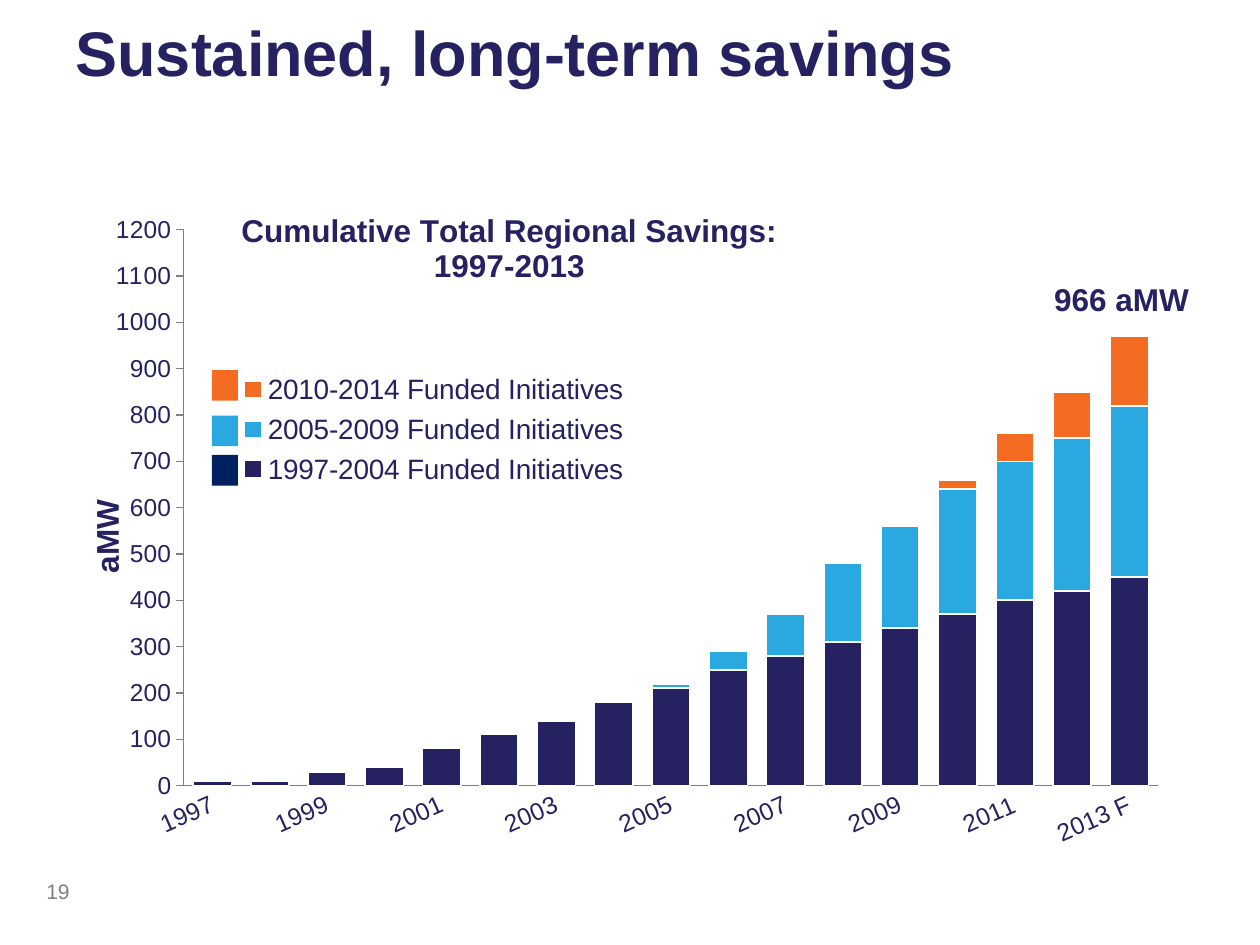
from dataclasses import dataclass

from lxml.etree import SubElement
from pptx import Presentation
from pptx.chart.data import CategoryChartData
from pptx.dml.color import RGBColor
from pptx.enum.chart import XL_CHART_TYPE, XL_LEGEND_POSITION, XL_TICK_MARK
from pptx.enum.shapes import MSO_SHAPE
from pptx.enum.text import MSO_ANCHOR, PP_ALIGN
from pptx.oxml.ns import qn
from pptx.oxml.xmlchemy import OxmlElement
from pptx.util import Pt

NAVY, SKY, ORANGE, DEEP_BLUE = "262262", "2AA9E0", "F36C21", "002060"
GREY, WHITE = "808080", "FFFFFF"


@dataclass
class Box:
    left: float
    top: float
    width: float
    height: float

    def points(self) -> tuple:
        return Pt(self.left), Pt(self.top), Pt(self.width), Pt(self.height)


@dataclass
class Period:
    name: str
    savings: list
    color: str
    key_color: str
    key_top: float


PERIODS = [
    Period("1997-2004 Funded Initiatives",
           [10, 10, 30, 40, 80, 110, 140, 180, 210, 250, 280, 310, 340, 370, 400, 420, 450],
           NAVY, DEEP_BLUE, 260),
    Period("2005-2009 Funded Initiatives",
           [0] * 8 + [10, 40, 90, 170, 220, 270, 300, 330, 370], SKY, SKY, 237.5),
    Period("2010-2014 Funded Initiatives",
           [0] * 13 + [20, 60, 100, 150], ORANGE, ORANGE, 211.5),
]
YEARS = [str(year) for year in range(1997, 2013)] + ["2013 F"]


def rgb(color: str) -> RGBColor:
    return RGBColor.from_string(color)


def set_font(font, size: float, color: str = NAVY, bold: bool = False) -> None:
    for key, value in {"name": "Arial", "size": Pt(size), "bold": bold}.items():
        setattr(font, key, value)
    font.color.rgb = rgb(color)


def add_label(slide, box: Box, text: str, size: float, color: str, bold: bool = False,
              align=PP_ALIGN.LEFT, wrap: bool = True) -> None:
    frame = slide.shapes.add_textbox(*box.points()).text_frame
    frame.word_wrap = wrap
    frame.text = text
    frame.paragraphs[0].alignment = align
    set_font(frame.paragraphs[0].font, size, color, bold)


def place(part, index: int, **settings) -> None:
    """Give a chart part a manual layout, in fractions of the chart."""
    layout = part.find(qn("c:layout"))
    if layout is not None:
        part.remove(layout)
    layout = OxmlElement("c:layout")
    part.insert(index, layout)
    manual = SubElement(layout, qn("c:manualLayout"))
    for tag, value in settings.items():
        SubElement(manual, qn(f"c:{tag}")).set("val", str(value))


def write_title(text_frame, text: str) -> None:
    text_frame.text = text
    for paragraph in text_frame.paragraphs:
        set_font(paragraph.font, 18, bold=True)


def format_axes(chart) -> None:
    years, savings = chart.category_axis, chart.value_axis
    for axis, tick in ((years, XL_TICK_MARK.NONE), (savings, XL_TICK_MARK.OUTSIDE)):
        axis.major_tick_mark = tick
        axis.minor_tick_mark = XL_TICK_MARK.NONE
        axis.has_major_gridlines = False
        axis.format.line.color.rgb = rgb(GREY)
        axis.format.line.width = Pt(0.75)
        set_font(axis.tick_labels.font, 14)
    scale = {"minimum_scale": 0, "maximum_scale": 1200, "major_unit": 100}
    for key, value in scale.items():
        setattr(savings, key, value)
    savings.tick_labels.number_format = "0"
    savings.tick_labels.number_format_is_linked = False
    write_title(savings.axis_title.text_frame, "aMW")

    # Slanted labels, every second year
    cat_axis = chart.element.find(".//" + qn("c:catAx"))
    cat_axis.find(qn("c:txPr")).find(qn("a:bodyPr")).set("rot", "-1440000")
    skip = OxmlElement("c:tickLblSkip")
    skip.set("val", "2")
    cat_axis.find(qn("c:noMultiLvlLbl")).addprevious(skip)


def add_savings_chart(slide, box: Box) -> None:
    data = CategoryChartData(number_format="0")
    data.categories = YEARS
    for period in PERIODS:
        data.add_series(period.name, period.savings)
    chart = slide.shapes.add_chart(XL_CHART_TYPE.COLUMN_STACKED, *box.points(), data).chart
    set_font(chart.font, 18)

    # Stacked columns
    plot = chart.plots[0]
    for key, value in {"gap_width": 50, "overlap": 100, "vary_by_categories": False}.items():
        setattr(plot, key, value)
    for series, period in zip(plot.series, PERIODS):
        series.format.fill.solid()
        series.format.fill.fore_color.rgb = rgb(period.color)
        series.format.line.color.rgb = rgb(WHITE)
        series.format.line.width = Pt(1)
    format_axes(chart)

    # Title and legend over the plot
    chart.has_title = True
    write_title(chart.chart_title.text_frame, "Cumulative Total Regional Savings:\n1997-2013")
    for paragraph in chart.chart_title.text_frame.paragraphs:
        paragraph.alignment = PP_ALIGN.CENTER
    chart.has_legend = True
    chart.legend.position = XL_LEGEND_POSITION.RIGHT
    chart.legend.include_in_layout = False
    set_font(chart.legend.font, 16)

    # Positions inside the chart
    root = chart.element
    title = chart.chart_title.element
    title.find(qn("c:overlay")).set("val", "1")
    place(title, 1, xMode="edge", yMode="edge", x=0.15, y=0.06)
    place(root.find(".//" + qn("c:valAx")).find(qn("c:title")), 1,
          xMode="edge", yMode="edge", x=0.01, y=0.46)
    place(root.find(".//" + qn("c:legend")), 1,
          xMode="edge", yMode="edge", x=0.14, y=0.28, w=0.37, h=0.18)
    place(root.find(".//" + qn("c:plotArea")), 0, layoutTarget="inner",
          xMode="edge", yMode="edge", x=0.102, y=0.092, w=0.868, h=0.774)


def add_key(slide, period: Period) -> None:
    box = Box(121, period.key_top, 15, 17.5)
    key = slide.shapes.add_shape(MSO_SHAPE.RECTANGLE, *box.points())
    key.shadow.inherit = False
    key.fill.solid()
    key.fill.fore_color.rgb = rgb(period.key_color)
    key.line.fill.background()


def main() -> None:
    deck = Presentation()
    deck.slide_width, deck.slide_height = Pt(720), Pt(540)
    slide = deck.slides.add_slide(deck.slide_layouts[5])

    # Heading
    heading = slide.shapes.title
    heading.left, heading.top, heading.width, heading.height = Box(36, 0, 659.5, 59).points()
    frame = heading.text_frame
    frame.text = "Sustained, long-term savings"
    frame_format = {"vertical_anchor": MSO_ANCHOR.MIDDLE, "margin_left": Pt(7.2),
                    "margin_right": 0, "word_wrap": True}
    for key, value in frame_format.items():
        setattr(frame, key, value)
    frame.paragraphs[0].alignment = PP_ALIGN.LEFT
    set_font(frame.paragraphs[0].font, 36, bold=True)

    # Chart, its total and the larger legend keys
    add_savings_chart(slide, Box(39.6, 93.6, 641.5, 410.4))
    add_label(slide, Box(594.7, 156.2, 92.2, 29), "966 aMW", 18, NAVY,
              bold=True, align=PP_ALIGN.CENTER, wrap=False)
    for period in reversed(PERIODS):
        add_key(slide, period)

    # Page number
    add_label(slide, Box(19.4, 498.2, 150, 24), "19", 12, GREY)
    deck.save("out.pptx")


if __name__ == "__main__":
    main()
